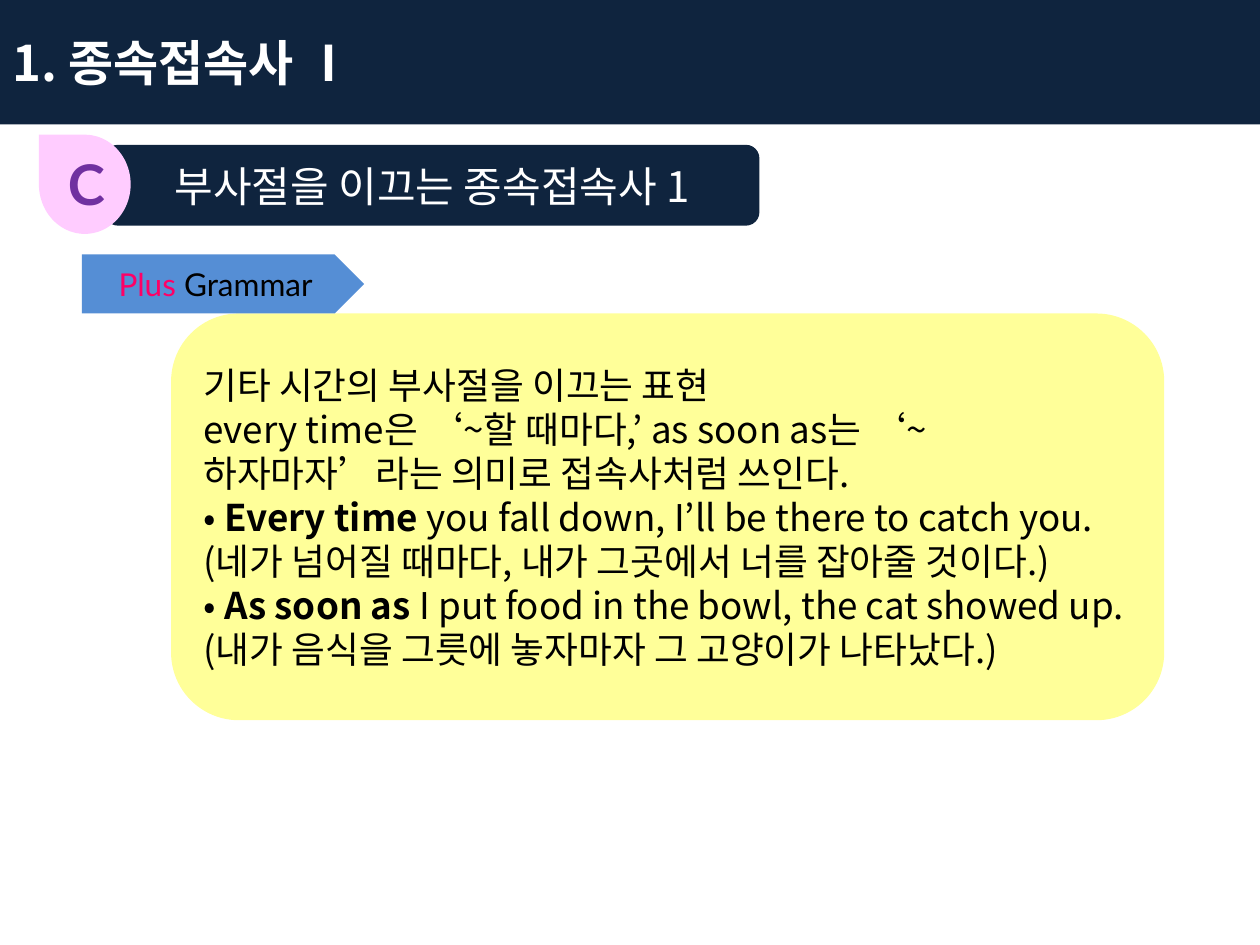
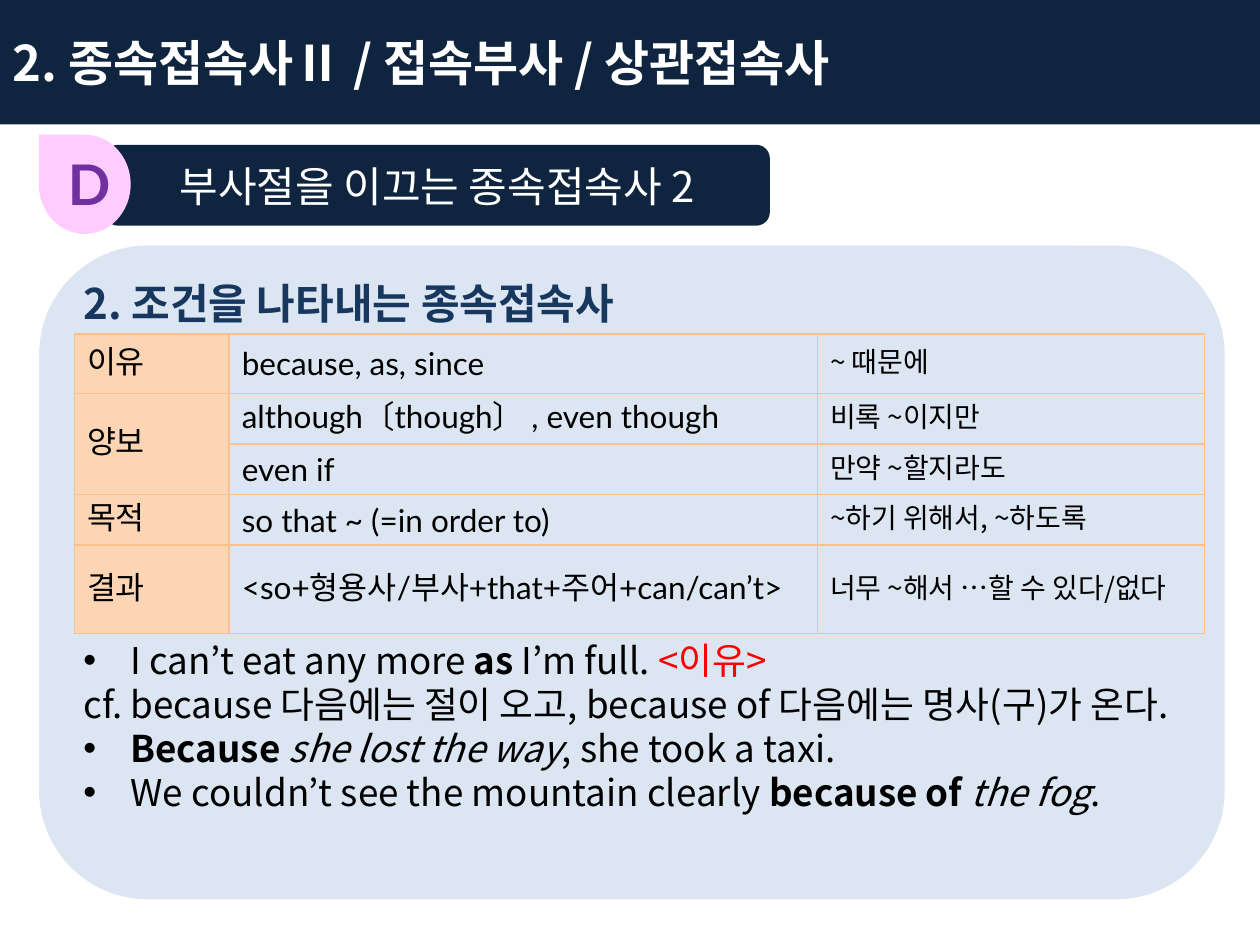
from collections import namedtuple

from lxml.etree import SubElement
from pptx import Presentation
from pptx.dml.color import RGBColor
from pptx.enum.shapes import MSO_SHAPE
from pptx.enum.text import MSO_ANCHOR, MSO_AUTO_SIZE, PP_ALIGN
from pptx.oxml.ns import qn
from pptx.util import Cm, Pt

NAVY = RGBColor(0x0F, 0x24, 0x3E)
WHITE = RGBColor(0xFF, 0xFF, 0xFF)
BLACK = RGBColor(0x00, 0x00, 0x00)
PINK = RGBColor(0xFF, 0xCC, 0xFF)
PURPLE = RGBColor(0x70, 0x30, 0xA0)
YELLOW = RGBColor(0xFF, 0xFF, 0x99)
BLUE = RGBColor(0x55, 0x8E, 0xD5)
MAGENTA = RGBColor(0xFF, 0x00, 0x66)
PALE_BLUE = RGBColor(0xDC, 0xE6, 0xF2)
DEEP_BLUE = RGBColor(0x17, 0x37, 0x5E)
RED = RGBColor(0xFF, 0x00, 0x00)
PEACH = RGBColor(0xFC, 0xD5, 0xB5)
ORANGE = RGBColor(0xFA, 0xC0, 0x90)

LATIN_FONT = "Lato"
KOREAN_FONT = "Noto Sans CJK KR"
LINE_HEIGHT = 1.2

Box = namedtuple("Box", "left top width height")
Span = namedtuple("Span", "text bold italic color", defaults=(False, False, None))

PAGE = Box(0, 0, 25.4, 19.05)
TITLE_BAND = Box(0, 0, PAGE.width, 2.51)

USAGE_ROWS = [
    ("이유", "because, as, since", "~ 때문에"),
    ("양보", "although〔though〕 , even though", "비록 ~이지만"),
    ("", "even if", "만약 ~할지라도"),
    ("목적", "so that ~ (=in order to)", "~하기 위해서, ~하도록"),
    ("결과", "<so+형용사/부사+that+주어+can/can’t>", "너무 ~해서 …할 수 있다/없다"),
]
USAGE_COLUMN_WIDTHS = [3.12, 11.86, 7.8]
USAGE_ROW_HEIGHTS = [1.2, 1.02, 1.02, 1.02, 1.78]


def lengths(box):
    return [Cm(value) for value in box]


def write(para, spans, size, color=BLACK, font=KOREAN_FONT, align=PP_ALIGN.LEFT):
    """Fill a paragraph with spans of one size; a plain string is one span."""
    para.alignment = align
    para.line_spacing = Pt(size * LINE_HEIGHT)
    for span in [Span(spans)] if isinstance(spans, str) else spans:
        run = para.add_run()
        run.text = span.text
        run.font.size = Pt(size)
        run.font.name = font
        run.font.bold = span.bold
        run.font.italic = span.italic
        run.font.color.rgb = span.color or color
        SubElement(run.font._element, qn("a:ea")).set("typeface", KOREAN_FONT)


def next_para(frame):
    """Return the first paragraph while it is empty, else a new one."""
    first = frame.paragraphs[0]
    return frame.add_paragraph() if first.runs else first


def add_bullet(para, indent):
    properties = para._p.get_or_add_pPr()
    properties.set("marL", str(Cm(indent)))
    properties.set("indent", str(-Cm(indent)))
    SubElement(properties, qn("a:buFont")).set("typeface", "Arial")
    SubElement(properties, qn("a:buChar")).set("char", "•")


def add_filled_shape(page, kind, box, fill):
    shape = page.shapes.add_shape(kind, *lengths(box))
    shape.shadow.inherit = False
    shape.fill.solid()
    shape.fill.fore_color.rgb = fill
    shape.line.fill.background()
    shape.text_frame.word_wrap = True
    shape.text_frame.vertical_anchor = MSO_ANCHOR.MIDDLE
    return shape


def add_title_page(deck, title):
    page = deck.slides.add_slide(deck.slide_layouts[5])
    band = page.shapes.title
    band.left, band.top, band.width, band.height = lengths(TITLE_BAND)
    band.fill.solid()
    band.fill.fore_color.rgb = NAVY
    frame = band.text_frame
    frame.auto_size = MSO_AUTO_SIZE.NONE
    frame.vertical_anchor = MSO_ANCHOR.MIDDLE
    write(frame.paragraphs[0], [Span(title, bold=True)], 28, WHITE)
    return page


def add_section_header(page, box, letter, heading):
    """Draw the heading bar with its letter on a drop at the left end."""
    bar_left = box.left + 1.4
    bar = add_filled_shape(
        page, MSO_SHAPE.FLOWCHART_ALTERNATE_PROCESS,
        Box(bar_left, box.top + 0.13, box.width - 1.4, 1.63), NAVY)
    write(bar.text_frame.paragraphs[0], heading, 24, WHITE, align=PP_ALIGN.CENTER)

    drop = add_filled_shape(page, MSO_SHAPE.TEAR, Box(box.left, box.top, 2, box.height), PINK)
    drop.rotation = 270

    label = page.shapes.add_textbox(*lengths(Box(box.left + 0.41, box.top + 0.1, 1.2, 1.63)))
    write(label.text_frame.paragraphs[0], [Span(letter, bold=True)], 32, PURPLE, LATIN_FONT)


def add_plus_grammar(page, box):
    """Draw the yellow note with its arrow tag above the left corner."""
    tag_height = 1.19
    note = add_filled_shape(
        page, MSO_SHAPE.FLOWCHART_ALTERNATE_PROCESS,
        Box(box.left + 1.8, box.top + tag_height, box.width - 1.8, box.height - tag_height),
        YELLOW)
    for spans in [
        "기타 시간의 부사절을 이끄는 표현",
        "every time은 ‘~할 때마다,’ as soon as는 ‘~하자마자’라는 의미로 접속사처럼 쓰인다.",
        [Span("• "), Span("Every time ", bold=True),
         Span("you fall down, I’ll be there to catch you. "
              "(네가 넘어질 때마다, 내가 그곳에서 너를 잡아줄 것이다.)")],
        [Span("• "), Span("As soon as ", bold=True),
         Span("I put food in the bowl, the cat showed up.")],
        "(내가 음식을 그릇에 놓자마자 그 고양이가 나타났다.)",
    ]:
        write(next_para(note.text_frame), spans, 21)

    tag = add_filled_shape(
        page, MSO_SHAPE.PENTAGON, Box(box.left, box.top, 5.69, tag_height), BLUE)
    write(tag.text_frame.paragraphs[0], [Span("Plus ", color=MAGENTA), Span("Grammar")],
          18, font=LATIN_FONT, align=PP_ALIGN.CENTER)


def add_cell_borders(cell):
    properties = cell._tc.get_or_add_tcPr()
    for position, side in enumerate(("lnL", "lnR", "lnT", "lnB")):
        line = SubElement(properties, qn(f"a:{side}"), w=str(Pt(1)))
        fill = SubElement(line, qn("a:solidFill"))
        SubElement(fill, qn("a:srgbClr")).set("val", str(ORANGE))
        properties.insert(position, line)


def add_usage_table(page, left, top):
    box = Box(left, top, sum(USAGE_COLUMN_WIDTHS), sum(USAGE_ROW_HEIGHTS))
    table = page.shapes.add_table(
        len(USAGE_ROWS), len(USAGE_COLUMN_WIDTHS), *lengths(box)).table
    table.first_row = False
    table.horz_banding = False
    for column, width in zip(table.columns, USAGE_COLUMN_WIDTHS):
        column.width = Cm(width)
    for row, height in zip(table.rows, USAGE_ROW_HEIGHTS):
        row.height = Cm(height)
    for row, texts in zip(table.rows, USAGE_ROWS):
        for index, (cell, text) in enumerate(zip(row.cells, texts)):
            cell.vertical_anchor = MSO_ANCHOR.MIDDLE
            if index == 0:
                cell.fill.solid()
                cell.fill.fore_color.rgb = PEACH
            else:
                cell.fill.background()
            add_cell_borders(cell)
            if text:
                size, font = (16, KOREAN_FONT) if index == 2 else (18, LATIN_FONT)
                write(cell.text_frame.paragraphs[0], text, size, font=font)
    table.cell(1, 0).merge(table.cell(2, 0))


def add_condition_card(page, box):
    """Draw the card: heading, usage table and the examples below it."""
    card = add_filled_shape(page, MSO_SHAPE.FLOWCHART_ALTERNATE_PROCESS, box, PALE_BLUE)
    frame = card.text_frame
    frame.vertical_anchor = MSO_ANCHOR.TOP
    frame.margin_top = 0

    heading = frame.paragraphs[0]
    write(heading, [Span("2. 조건을 나타내는 종속접속사", bold=True)], 24, DEEP_BLUE)
    heading.space_after = Pt(177)

    for bulleted, spans in [
        (True, [Span("I can’t eat any more "), Span("as", bold=True),
                Span(" I’m full. "), Span("<이유>", color=RED)]),
        (False, "cf. because 다음에는 절이 오고, because of 다음에는 명사(구)가 온다."),
        (True, [Span("Because ", bold=True), Span("she lost the way", italic=True),
                Span(", she took a taxi.")]),
        (True, [Span("We couldn’t see the mountain clearly "),
                Span("because of ", bold=True), Span("the fog", italic=True), Span(".")]),
    ]:
        para = next_para(frame)
        write(para, spans, 21, align=PP_ALIGN.JUSTIFY)
        if bulleted:
            add_bullet(para, 0.95)

    add_usage_table(page, box.left + 0.71, box.top + 1.78)


def main():
    deck = Presentation()
    deck.slide_width, deck.slide_height = Cm(PAGE.width), Cm(PAGE.height)

    time_page = add_title_page(deck, "1. 종속접속사 Ⅰ")
    add_plus_grammar(time_page, Box(1.65, 5.13, 21.82, 9.39))
    add_section_header(time_page, Box(0.71, 2.79, 14.6, 1.85), "C",
                       "부사절을 이끄는 종속접속사 1")

    condition_page = add_title_page(deck, "2. 종속접속사Ⅱ / 접속부사 / 상관접속사")
    add_section_header(condition_page, Box(0.71, 2.79, 14.81, 1.85), "D",
                       "부사절을 이끄는 종속접속사 2")
    add_condition_card(condition_page, Box(0.79, 4.95, 23.9, 13.18))

    deck.save("out.pptx")


if __name__ == "__main__":
    main()
